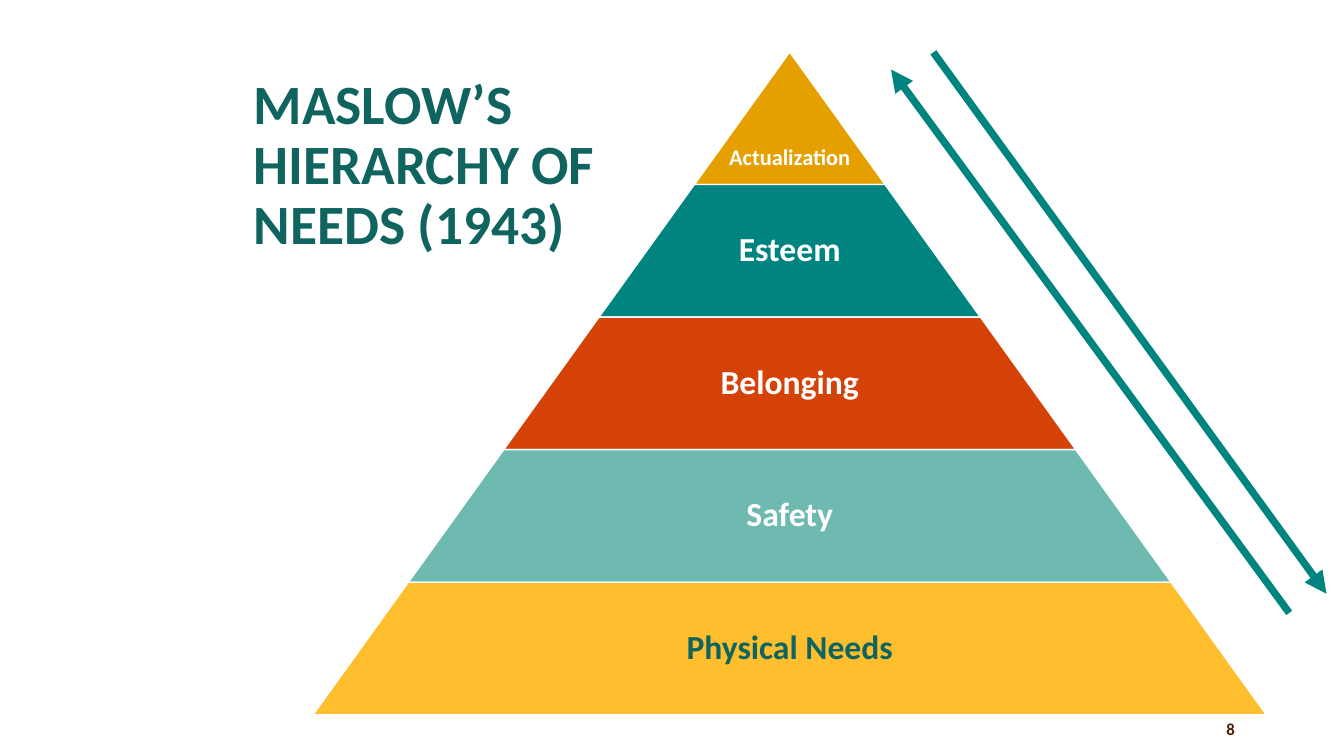
from lxml import etree
from pptx import Presentation
from pptx.dml.color import RGBColor
from pptx.enum.shapes import MSO_CONNECTOR, MSO_SHAPE
from pptx.enum.text import MSO_ANCHOR, PP_ALIGN
from pptx.oxml.ns import qn
from pptx.util import Pt

TRAPEZOID = MSO_SHAPE.TRAPEZOID
STRAIGHT = MSO_CONNECTOR.STRAIGHT
TOP, MIDDLE = MSO_ANCHOR.TOP, MSO_ANCHOR.MIDDLE
LEFT, CENTER = PP_ALIGN.LEFT, PP_ALIGN.CENTER

WHITE = RGBColor(0xFF, 0xFF, 0xFF)
DARK_TEAL = RGBColor(0x0F, 0x64, 0x60)
TEAL = RGBColor(0x00, 0x84, 0x80)
BROWN = RGBColor(0x4E, 0x1E, 0x07)
GOLD = RGBColor(0xE5, 0xA0, 0x00)
RED = RGBColor(0xD4, 0x42, 0x07)
MINT = RGBColor(0x6E, 0xBA, 0xB1)
YELLOW = RGBColor(0xFF, 0xBE, 0x2D)

CENTER_X = 564.1
PYRAMID_TOP = 37.1
TIER_HEIGHT = 94.7
TIER_WIDTH_STEP = 136.2
LABEL_SHARE = 0.65

TIERS = [
    ("Actualization", GOLD, WHITE),
    ("Esteem", TEAL, WHITE),
    ("Belonging", RED, WHITE),
    ("Safety", MINT, WHITE),
    ("Physical Needs", YELLOW, DARK_TEAL),
]


def add_text(s, text, left, top, width, height, size=24, color=WHITE,
             align=LEFT, anchor=TOP, inset_x=7.2, inset_y=3.6):
    tf = s.shapes.add_textbox(Pt(left), Pt(top), Pt(width), Pt(height)).text_frame
    tf.word_wrap = True
    tf.vertical_anchor = anchor
    tf.margin_left = tf.margin_right = Pt(inset_x)
    tf.margin_top = tf.margin_bottom = Pt(inset_y)
    p = tf.paragraphs[0]
    p.alignment = align
    p.line_spacing = 0.9
    r = p.add_run()
    r.text = text
    r.font.name = "Calibri"
    r.font.size = Pt(size)
    r.font.bold = True
    r.font.color.rgb = color


def add_tier(s, index, fill):
    width = TIER_WIDTH_STEP * (index + 1)
    top = PYRAMID_TOP + TIER_HEIGHT * index
    sp = s.shapes.add_shape(TRAPEZOID, Pt(CENTER_X - width / 2), Pt(top),
                            Pt(width), Pt(TIER_HEIGHT))
    sp.adjustments[0] = TIER_WIDTH_STEP / 2 / TIER_HEIGHT
    sp.shadow.inherit = False
    sp.fill.solid()
    sp.fill.fore_color.rgb = fill
    sp.line.color.rgb = WHITE
    sp.line.width = Pt(1)


def add_label(s, index, text, color):
    width = TIER_WIDTH_STEP * (index + 1)
    top = PYRAMID_TOP + TIER_HEIGHT * index
    height, size = TIER_HEIGHT, 24
    if index == 0:
        top, height, size = 79.2, 67.7, 16
    else:
        width *= LABEL_SHARE
    add_text(s, text, CENTER_X - width / 2, top, width, height, size=size,
             color=color, align=CENTER, anchor=MIDDLE, inset_x=2.2, inset_y=2.2)


def add_arrow(s, x1, y1, x2, y2):
    line = s.shapes.add_connector(STRAIGHT, Pt(x1), Pt(y1), Pt(x2), Pt(y2))
    line.line.color.rgb = TEAL
    line.line.width = Pt(5.25)
    etree.SubElement(line.line._get_or_add_ln(), qn("a:tailEnd"), type="triangle")
    etree.SubElement(line._element.spPr, qn("a:effectLst"))


def main():
    prs = Presentation()
    prs.slide_width, prs.slide_height = Pt(960), Pt(540)
    s = prs.slides.add_slide(prs.slide_layouts[6])
    add_text(s, "MASLOW’S HIERARCHY OF NEEDS (1943)", 174.2, 75.6, 288.7, 87.1,
             size=39.6, color=DARK_TEAL, anchor=MIDDLE)
    for index, (text, fill, color) in enumerate(TIERS):
        add_tier(s, index, fill)
        add_label(s, index, text, color)
    add_arrow(s, 666.7, 37.4, 947.5, 424.1)
    add_arrow(s, 920.9, 437.8, 636.5, 49.7)
    add_text(s, "8", 869, 511.2, 72, 28.8, size=12, color=BROWN)
    prs.save("out.pptx")


if __name__ == "__main__":
    main()
